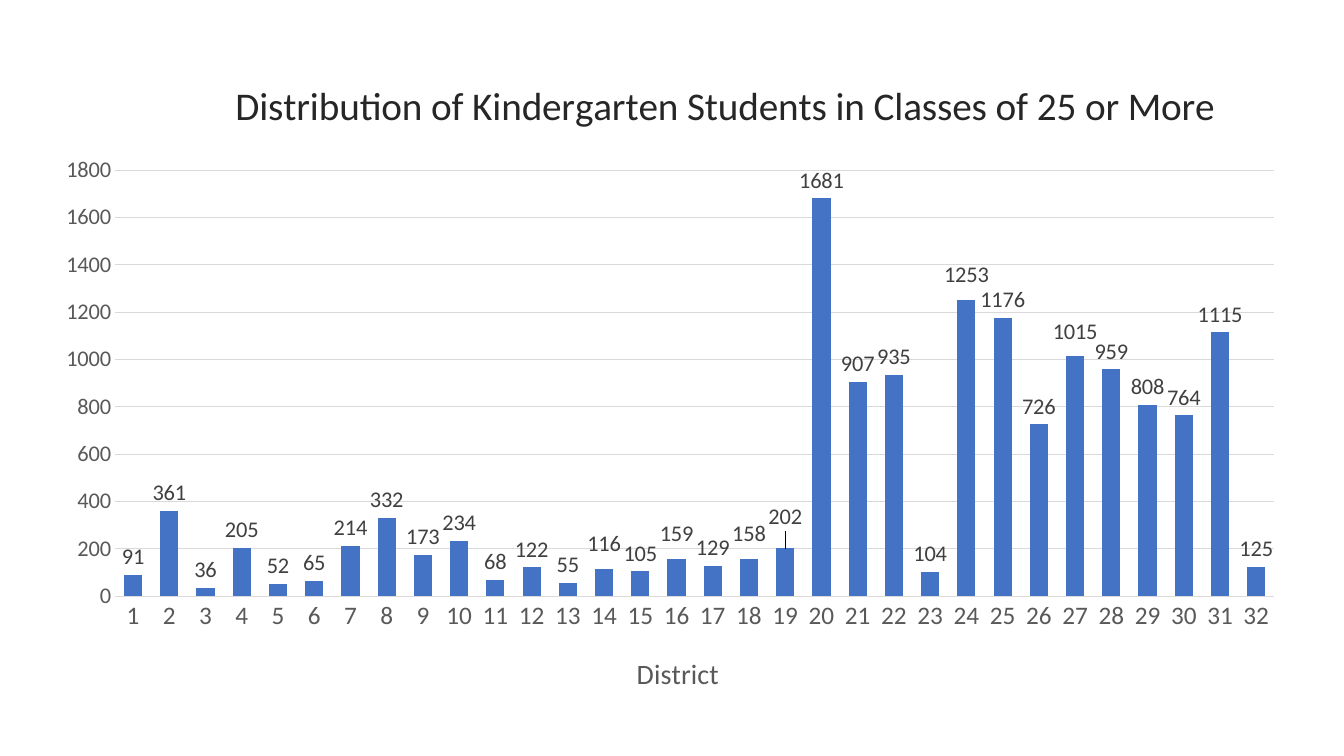
import pptx
import pptx.chart.data
import pptx.dml.color
import pptx.enum.chart
import pptx.oxml
import pptx.oxml.ns
import pptx.util

ENUM = pptx.enum.chart
COUNTS = [91, 361, 36, 205, 52, 65, 214, 332, 173, 234, 68, 122, 55, 116, 105, 159,
          129, 158, 202, 1681, 907, 935, 104, 1253, 1176, 726, 1015, 959, 808, 764,
          1115, 125]
# District: label shift, as a share of the chart height
SHIFTS = {14: -0.01, 16: -0.01, 18: -0.01, 19: -0.02, 24: -0.01, 27: -0.01}


def px(size):
    return pptx.util.Emu(size * 9144)


def color(text):
    return pptx.dml.color.RGBColor.from_string(text)


class Deck:
    face = "Calibri"
    gray = "595959"
    rule = "D9D9D9"

    def __init__(self, wide, high):
        self.file = pptx.Presentation()
        self.file.slide_width = px(wide)
        self.file.slide_height = px(high)
        self.slide = self.file.slides.add_slide(self.file.slide_layouts[6])

    def font(self, font, size, shade):
        font.name = self.face
        font.size = pptx.util.Pt(size)
        font.bold = False
        font.color.rgb = color(shade)

    def line(self, line):
        line.color.rgb = color(self.rule)
        line.width = pptx.util.Pt(0.75)

    def place(self, node, index, inner=False, mode=True, **spots):
        """Put a manual layout into a chart part."""
        for old in node.xpath("c:layout"):
            node.remove(old)
        parts = '<c:layoutTarget val="inner"/>' if inner else ""
        if mode:
            parts += '<c:xMode val="edge"/><c:yMode val="edge"/>'
        parts += "".join(f'<c:{key} val="{spot}"/>' for key, spot in spots.items())
        node.insert(index, pptx.oxml.parse_xml(
            f'<c:layout {pptx.oxml.ns.nsdecls("c")}>'
            f"<c:manualLayout>{parts}</c:manualLayout></c:layout>"))

    def title(self, owner, text, size, shade, x, y):
        owner.has_title = True if hasattr(owner, "has_legend") else owner.has_title
        title = owner.chart_title if hasattr(owner, "has_legend") else owner.axis_title
        run = title.text_frame.paragraphs[0].add_run()
        run.text = text
        self.font(run.font, size, shade)
        self.place(title._element, 1, x=x, y=y)

    def axis(self, axis, size):
        axis.major_tick_mark = axis.minor_tick_mark = ENUM.XL_TICK_MARK.NONE
        self.font(axis.tick_labels.font, size, self.gray)

    def bars(self, x, y, wide, high, name, names, counts):
        data = pptx.chart.data.CategoryChartData()
        data.categories = names
        data.add_series(name, counts)
        chart = self.slide.shapes.add_chart(
            ENUM.XL_CHART_TYPE.COLUMN_CLUSTERED,
            px(x), px(y), px(wide), px(high), data).chart
        chart.has_legend = False
        self.font(chart.font, 10, "000000")
        plot = chart.plots[0]
        plot.gap_width = 100
        plot.vary_by_categories = False
        fill = plot.series[0].format.fill
        fill.solid()
        fill.fore_color.rgb = color("4472C4")
        return chart

    def labels(self, series, shifts):
        # Moved labels first, then the shared style
        for place, shift in shifts.items():
            label = series.points[place - 1].data_label
            self.font(label.font, 16, "404040")
            label.position = ENUM.XL_LABEL_POSITION.OUTSIDE_END
            node = series._element.xpath(f"c:dLbls/c:dLbl[c:idx/@val={place - 1}]")[0]
            self.place(node, 1, mode=False, x=0, y=shift)
        labels = series.data_labels
        labels.show_value = True
        labels.position = ENUM.XL_LABEL_POSITION.OUTSIDE_END
        self.font(labels.font, 16, "404040")


def main():
    deck = Deck(1333, 750)

    # Chart and titles
    names = [str(place + 1) for place in range(len(COUNTS))]
    chart = deck.bars(39, 52, 1250, 650, "Students", names, COUNTS)
    deck.title(chart, "Distribution of Kindergarten Students in Classes of 25 or More",
               28, "262626", 0.15, 0.03)
    deck.title(chart.category_axis, "District", 20, deck.gray, 0.47, 0.91)
    area = chart._chartSpace.xpath(".//c:plotArea")[0]
    deck.place(area, 0, inner=True, x=0.06, y=0.18, w=0.92, h=0.65)

    # Axes
    deck.axis(chart.category_axis, 18)
    deck.line(chart.category_axis.format.line)
    scale = chart.value_axis
    deck.axis(scale, 16)
    scale.format.line.fill.background()
    scale.minimum_scale, scale.maximum_scale, scale.major_unit = 0, 1800, 200
    scale.has_major_gridlines = True
    deck.line(scale.major_gridlines.format.line)

    # Values over the bars
    deck.labels(chart.plots[0].series[0], SHIFTS)

    deck.file.save("out.pptx")


if __name__ == "__main__":
    main()
